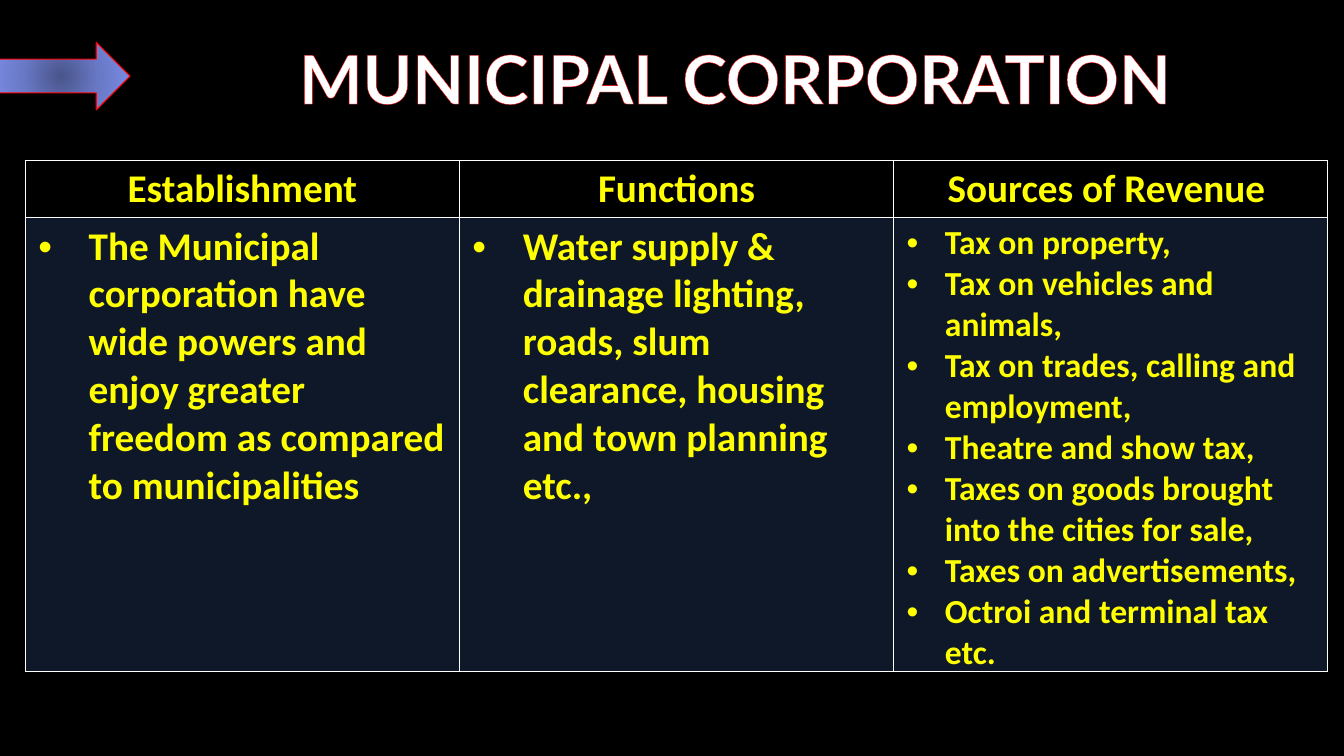
from dataclasses import dataclass

from lxml import etree
from pptx import Presentation
from pptx.dml.color import RGBColor
from pptx.enum.shapes import MSO_SHAPE
from pptx.enum.text import MSO_ANCHOR, PP_ALIGN
from pptx.oxml import parse_xml
from pptx.oxml.ns import nsdecls, qn
from pptx.slide import Slide
from pptx.table import _Cell
from pptx.util import Inches, Pt

RIGHT_ARROW = MSO_SHAPE.RIGHT_ARROW
MIDDLE = MSO_ANCHOR.MIDDLE
CENTER = PP_ALIGN.CENTER

BLACK = RGBColor(0x00, 0x00, 0x00)
WHITE = RGBColor(0xFF, 0xFF, 0xFF)
RED = RGBColor(0xFF, 0x00, 0x00)
YELLOW = RGBColor(0xFF, 0xFF, 0x00)
CELL_BLUE = RGBColor(0x47, 0x7B, 0xD1)
ARROW_STOPS = (
    (0, RGBColor(0x4A, 0x55, 0x8B)),
    (50, RGBColor(0x69, 0x79, 0xC6)),
    (100, RGBColor(0x7C, 0x90, 0xEB)),
)
CELL_OPACITY = 20
COLUMN_WIDTH = 12.92 / 3
HEADER_SIZE = 28


@dataclass(frozen=True)
class Topic:
    heading: str
    points: tuple[str, ...]
    size: int
    indent: float


TOPICS = (
    Topic(
        "Establishment",
        ("The Municipal corporation have wide powers and enjoy greater "
         "freedom as compared to municipalities",),
        28, 0.5,
    ),
    Topic(
        "Functions",
        ("Water supply & drainage lighting, roads, slum clearance, "
         "housing and town planning etc.,",),
        28, 0.5,
    ),
    Topic(
        "Sources of Revenue ",
        (
            "Tax on property,",
            "Tax on vehicles and animals,",
            "Tax on trades, calling and employment,",
            "Theatre and show tax,",
            "Taxes on goods brought into the cities for sale,",
            "Taxes on advertisements,",
            "Octroi and terminal tax etc.",
        ),
        24, 0.38,
    ),
)


def line_xml(tag: str, color: RGBColor, points: float) -> etree._Element:
    return parse_xml(
        f'<a:{tag} {nsdecls("a")} w="{Pt(points)}"><a:solidFill>'
        f'<a:srgbClr val="{color}"/></a:solidFill></a:{tag}>'
    )


def add_title(slide: Slide, text: str) -> None:
    box = slide.shapes.add_textbox(
        Inches(1.75), Inches(-0.03), Inches(11.08), Inches(1.59))
    frame = box.text_frame
    frame.word_wrap = True
    frame.vertical_anchor = MIDDLE
    frame.text = text
    paragraph = frame.paragraphs[0]
    paragraph.alignment = CENTER
    font = paragraph.runs[0].font
    font.name = "Lato"
    font.size = Pt(48)
    font.bold = True
    font.color.rgb = WHITE
    paragraph.runs[0]._r.get_or_add_rPr().insert(0, line_xml("ln", RED, 0.25))


def add_arrow(slide: Slide) -> None:
    arrow = slide.shapes.add_shape(
        RIGHT_ARROW, Inches(-0.08), Inches(0.42), Inches(1.37), Inches(0.67))
    arrow.shadow.inherit = False
    arrow.line.color.rgb = RED
    arrow.line.width = Pt(0.75)
    stops = "".join(
        f'<a:gs pos="{position * 1000}"><a:srgbClr val="{color}"/></a:gs>'
        for position, color in ARROW_STOPS
    )
    gradient = parse_xml(
        f'<a:gradFill {nsdecls("a")}><a:gsLst>{stops}</a:gsLst>'
        '<a:path path="circle"><a:fillToRect l="50000" t="50000" '
        'r="50000" b="50000"/></a:path></a:gradFill>'
    )
    arrow._element.spPr.find(qn("a:prstGeom")).addnext(gradient)


def fill_cell(cell: _Cell, lines: tuple[str, ...], size: int) -> None:
    """Write the lines into the cell and give it white borders."""
    cell.margin_left = cell.margin_right = Inches(0.13)
    cell.margin_top = cell.margin_bottom = Inches(0.05)
    cell.text_frame.text = "\n".join(lines)
    for paragraph in cell.text_frame.paragraphs:
        font = paragraph.runs[0].font
        font.name = "Calibri"
        font.size = Pt(size)
        font.bold = True
        font.color.rgb = YELLOW
    properties = cell._tc.get_or_add_tcPr()
    for index, tag in enumerate(("lnL", "lnR", "lnT", "lnB")):
        properties.insert(index, line_xml(tag, WHITE, 1))


def add_bullets(cell: _Cell, indent: float) -> None:
    for paragraph in cell.text_frame.paragraphs:
        properties = paragraph._p.get_or_add_pPr()
        properties.set("marL", str(Inches(indent)))
        properties.set("indent", str(-Inches(indent)))
        bullet_font = etree.SubElement(properties, qn("a:buFont"))
        bullet_font.set("typeface", "Arial")
        etree.SubElement(properties, qn("a:buChar")).set("char", "•")


def tint_cell(cell: _Cell) -> None:
    cell.fill.solid()
    cell.fill.fore_color.rgb = CELL_BLUE
    color = cell._tc.tcPr.find(f"{qn('a:solidFill')}/{qn('a:srgbClr')}")
    etree.SubElement(color, qn("a:alpha")).set("val", str(CELL_OPACITY * 1000))


def add_topic_table(slide: Slide) -> None:
    table = slide.shapes.add_table(
        2, len(TOPICS), Inches(0.25), Inches(1.59),
        Inches(COLUMN_WIDTH * len(TOPICS)), Inches(4.33)).table
    table.first_row = table.horz_banding = False
    table.rows[0].height = Inches(0.57)
    table.rows[1].height = Inches(3.76)
    for index, topic in enumerate(TOPICS):
        table.columns[index].width = Inches(COLUMN_WIDTH)
        header = table.cell(0, index)
        fill_cell(header, (topic.heading,), HEADER_SIZE)
        header.text_frame.paragraphs[0].alignment = CENTER
        header.fill.background()
        body = table.cell(1, index)
        fill_cell(body, topic.points, topic.size)
        add_bullets(body, topic.indent)
        tint_cell(body)


def main() -> None:
    presentation = Presentation()
    presentation.slide_width = Inches(13.33)
    presentation.slide_height = Inches(7.5)
    slide = presentation.slides.add_slide(presentation.slide_layouts[6])
    slide.background.fill.solid()
    slide.background.fill.fore_color.rgb = BLACK
    add_title(slide, "MUNICIPAL CORPORATION")
    add_topic_table(slide)
    add_arrow(slide)
    presentation.save("out.pptx")


if __name__ == "__main__":
    main()
